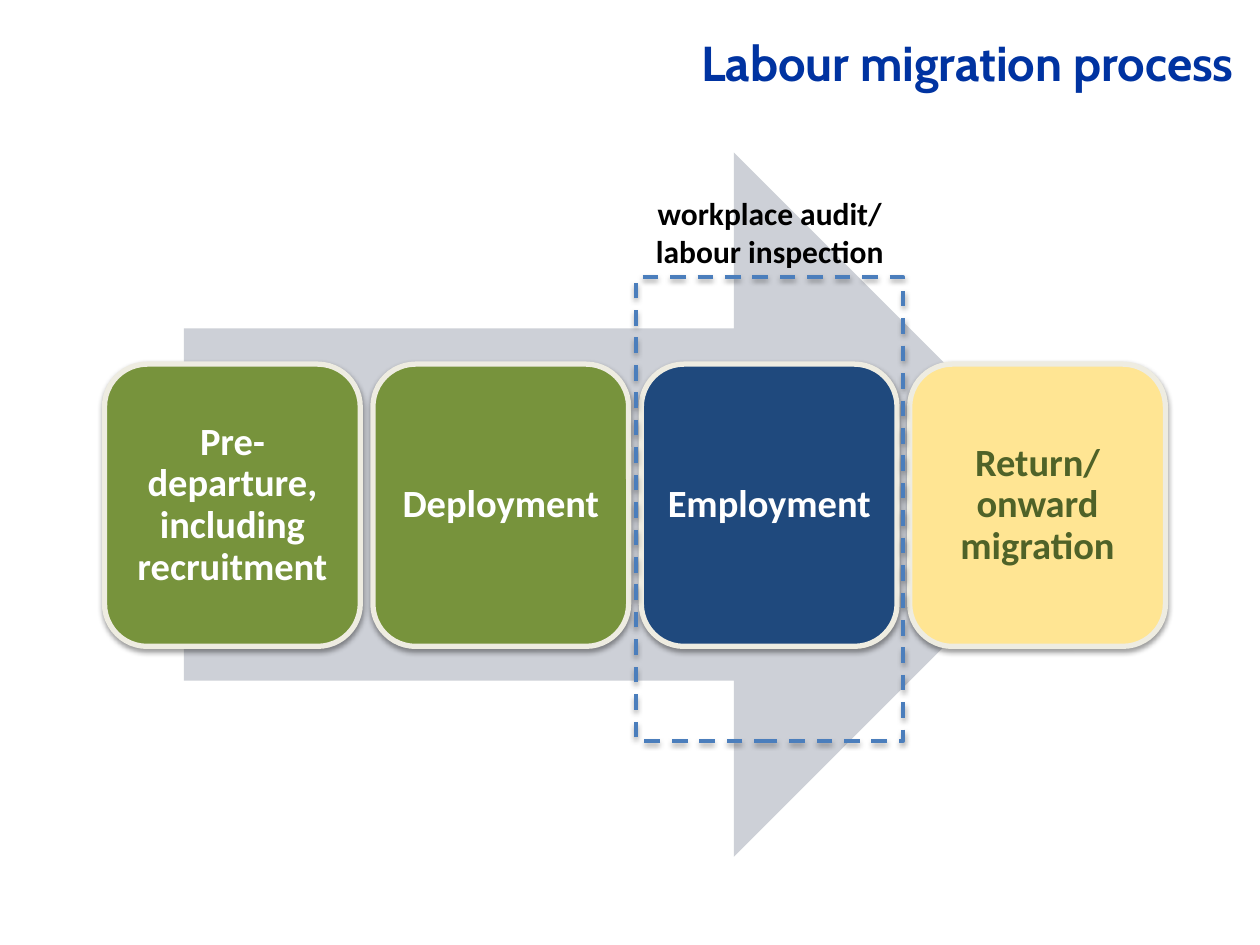
"""Build the labour migration process slide."""
from lxml import etree
from pptx import Presentation
from pptx.dml.color import RGBColor
from pptx.enum import dml, shapes, text
from pptx.oxml import ns
from pptx.util import Inches, Pt

TITLE_BLUE = RGBColor(0x00, 0x33, 0xA1)
ARROW_GREY = RGBColor(0xCD, 0xD0, 0xD7)
GREEN = RGBColor(0x77, 0x93, 0x3C)
NAVY = RGBColor(0x1F, 0x49, 0x7D)
YELLOW = RGBColor(0xFF, 0xE5, 0x93)
DARK_GREEN = RGBColor(0x4F, 0x62, 0x28)
CREAM = RGBColor(0xEE, 0xEC, 0xE1)
DASH_BLUE = RGBColor(0x4B, 0x7E, 0xBC)
WHITE = RGBColor(0xFF, 0xFF, 0xFF)
BLACK = RGBColor(0x00, 0x00, 0x00)

STAGES = [
    ("Pre-departure, including recruitment", GREEN, WHITE),
    ("Deployment", GREEN, WHITE),
    ("Employment", NAVY, WHITE),
    ("Return/ onward migration", YELLOW, DARK_GREEN),
]
STAGE_LEFT, STAGE_STEP = 0.83, 2.13


class ProcessSlide:
    """Hold the style and the current slide."""

    title_font = "Cabin"
    body_font = "Calibri"

    def __init__(self, deck):
        self.slide = deck.slides.add_slide(deck.slide_layouts[5])

    def format_text(self, frame, size, color, font, align):
        frame.word_wrap = True
        for paragraph in frame.paragraphs:
            paragraph.alignment = align
            for run in paragraph.runs:
                run.font.name = font
                run.font.size = Pt(size)
                run.font.bold = True
                run.font.color.rgb = color

    def title(self, wording, *box):
        heading = self.slide.shapes.title
        heading.left, heading.top, heading.width, heading.height = map(Inches, box)
        frame = heading.text_frame
        frame.text = wording
        frame.vertical_anchor = text.MSO_ANCHOR.MIDDLE
        self.format_text(frame, 28, TITLE_BLUE, self.title_font, text.PP_ALIGN.RIGHT)

    def shape(self, preset, box, fill=None, line=None, weight=0, shadow=0):
        item = self.slide.shapes.add_shape(preset, *map(Inches, box))
        item.shadow.inherit = False
        if fill is None:
            item.fill.background()
        else:
            item.fill.solid()
            item.fill.fore_color.rgb = fill
        if line is None:
            item.line.fill.background()
        else:
            item.line.color.rgb = line
            item.line.width = Pt(weight)
        if shadow:
            self.cast_shadow(item, shadow)
        return item

    def cast_shadow(self, item, opacity):
        effects = item.element.spPr.find(ns.qn("a:effectLst"))
        outer = etree.SubElement(
            effects, ns.qn("a:outerShdw"), blurRad=str(Pt(3.1)),
            dist=str(Pt(1.6)), dir="5400000", rotWithShape="0")
        color = etree.SubElement(outer, ns.qn("a:srgbClr"), val=str(BLACK))
        etree.SubElement(color, ns.qn("a:alpha"), val=str(opacity * 1000))

    def arrow(self, *box):
        self.shape(shapes.MSO_SHAPE.RIGHT_ARROW, box, ARROW_GREY)

    def stage(self, wording, fill, color, *box):
        card = self.shape(shapes.MSO_SHAPE.ROUNDED_RECTANGLE, box, fill, CREAM, 3, 38)
        frame = card.text_frame
        frame.margin_left = frame.margin_right = Inches(0.09)
        frame.margin_top = frame.margin_bottom = Inches(0.09)
        frame.vertical_anchor = text.MSO_ANCHOR.MIDDLE
        frame.text = wording
        frame.paragraphs[0].line_spacing = 0.9
        self.format_text(frame, 22, color, self.body_font, text.PP_ALIGN.CENTER)

    def highlight(self, *box):
        border = self.shape(shapes.MSO_SHAPE.RECTANGLE, box, None, DASH_BLUE, 2.25, 35)
        border.line.dash_style = dml.MSO_LINE.DASH

    def label(self, wording, *box):
        frame = self.slide.shapes.add_textbox(*map(Inches, box)).text_frame
        frame.text = wording
        self.format_text(frame, 18, BLACK, self.body_font, text.PP_ALIGN.CENTER)
        frame.auto_size = text.MSO_AUTO_SIZE.SHAPE_TO_FIT_TEXT


def main():
    deck = Presentation()
    deck.slide_width, deck.slide_height = Inches(10), Inches(7.5)
    process = ProcessSlide(deck)
    process.title("Labour migration process", 2.3, -0.13, 7.59, 1.25)
    process.arrow(1.46, 1.21, 7.16, 5.59)
    for index, (wording, fill, color) in enumerate(STAGES):
        left = STAGE_LEFT + index * STAGE_STEP
        process.stage(wording, fill, color, left, 2.89, 2.03, 2.24)
    process.highlight(5.05, 2.2, 2.12, 3.68)
    process.label("workplace audit/\nlabour inspection", 5.05, 1.49, 2.12, 0.71)
    deck.save("out.pptx")


if __name__ == "__main__":
    main()
